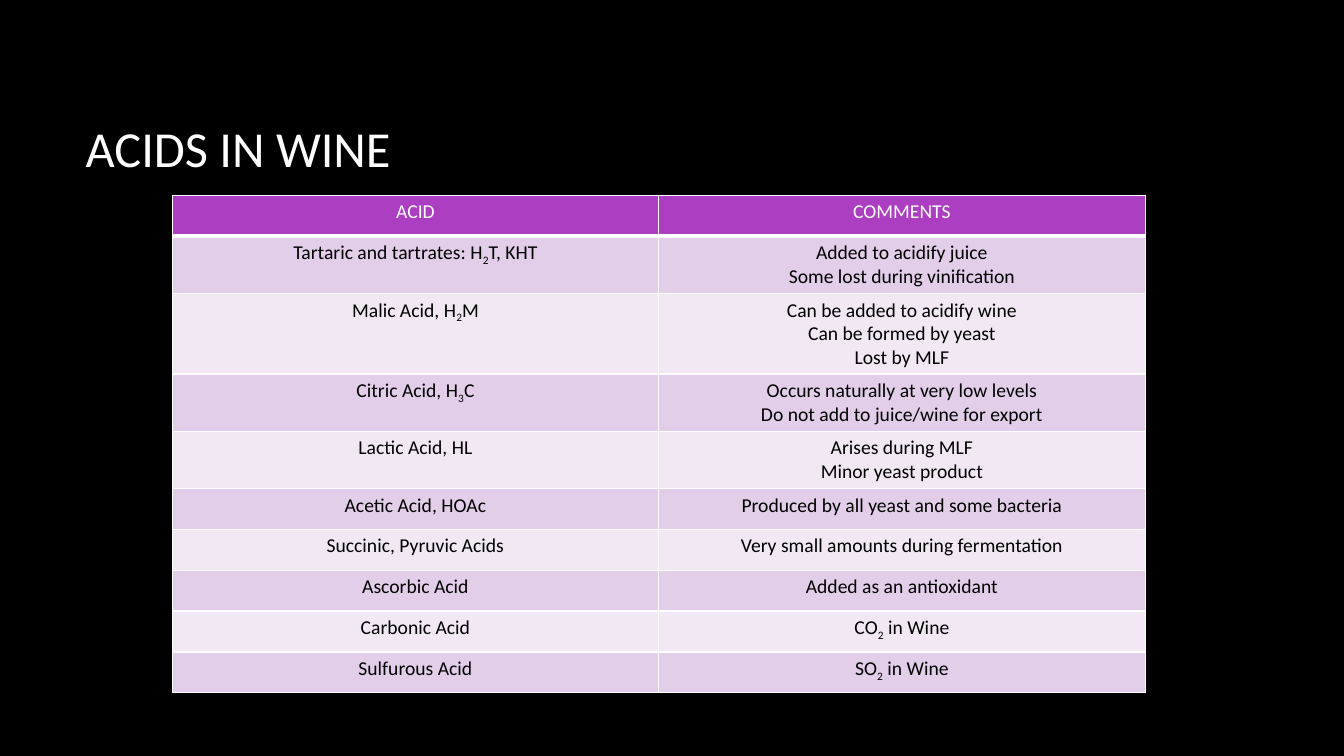
from lxml.etree import SubElement as Sub
from pptx import Presentation
from pptx.dml.color import RGBColor as Rgb
from pptx.enum.text import MSO_ANCHOR as Anchor, PP_ALIGN as Align
from pptx.oxml.ns import qn
from pptx.util import Cm, Pt

TITLE = "ACIDS IN WINE"
HEAD = ("ACID", ["COMMENTS"])
# Underscores enclose a subscript
ACIDS = [
    ("Tartaric and tartrates: H_2_T, KHT",
     ["Added to acidify juice", "Some lost during vinification"]),
    ("Malic Acid, H_2_M",
     ["Can be added to acidify wine", "Can be formed by yeast", "Lost by MLF"]),
    ("Citric Acid, H_3_C",
     ["Occurs naturally at very low levels", "Do not add to juice/wine for export"]),
    ("Lactic Acid, HL", ["Arises during MLF", "Minor yeast product"]),
    ("Acetic Acid, HOAc", ["Produced by all yeast and some bacteria"]),
    ("Succinic, Pyruvic Acids", ["Very small amounts during fermentation"]),
    ("Ascorbic Acid", ["Added as an antioxidant"]),
    ("Carbonic Acid", ["CO_2_ in Wine"]),
    ("Sulfurous Acid", ["SO_2_ in Wine"]),
]
COLORS = {"back": "000000", "light": "FFFFFF", "dark": "000000",
          "head": "AC3EC1", "odd": "E3CEE9", "even": "F1E8F4"}
FONT = "Calibri"
COL_W, ROW_H = 12.26, 1.03


def color(name):
    return Rgb.from_string(COLORS[name])


def style(run, size, tint):
    run.font.name = FONT
    run.font.size = Pt(size)
    run.font.color.rgb = color(tint)


def write(para, text, tint):
    para.alignment = Align.CENTER
    for i, part in enumerate(text.split("_")):
        run = para.add_run()
        run.text = part
        style(run, 14, tint)
        if i % 2:
            run.font._element.set("baseline", "-25000")


def border(cell, low):
    props = cell._tc.get_or_add_tcPr()
    for side, width in (("L", 1), ("R", 1), ("T", 1), ("B", low)):
        line = Sub(props, qn(f"a:ln{side}"), w=str(Pt(width)))
        fill = Sub(line, qn("a:solidFill"))
        Sub(fill, qn("a:srgbClr"), val=COLORS["light"])


def fill_cell(cell, lines, back, tint, low):
    border(cell, low)
    cell.fill.solid()
    cell.fill.fore_color.rgb = color(back)
    frame = cell.text_frame
    for i, text in enumerate(lines):
        para = frame.add_paragraph() if i else frame.paragraphs[0]
        write(para, text, tint)


def main():
    deck = Presentation()
    deck.slide_width, deck.slide_height = Cm(33.87), Cm(19.05)
    slide = deck.slides.add_slide(deck.slide_layouts[6])
    slide.background.fill.solid()
    slide.background.fill.fore_color.rgb = color("back")

    # Title
    box = slide.shapes.add_textbox(Cm(1.91), Cm(1.7), Cm(28.14), Cm(4.04))
    frame = box.text_frame
    frame.word_wrap = True
    frame.vertical_anchor = Anchor.MIDDLE
    frame.text = TITLE
    style(frame.paragraphs[0].runs[0], 36, "light")

    # Table of acids
    rows = [HEAD] + ACIDS
    table = slide.shapes.add_table(
        len(rows), 2, Cm(4.34), Cm(4.92),
        Cm(2 * COL_W), Cm(len(rows) * ROW_H)).table
    for col in table.columns:
        col.width = Cm(COL_W)
    for i, (acid, notes) in enumerate(rows):
        table.rows[i].height = Cm(ROW_H)
        if i == 0:
            look = ("head", "light", 3)
        else:
            look = ("odd" if i % 2 else "even", "dark", 1)
        fill_cell(table.cell(i, 0), [acid], *look)
        fill_cell(table.cell(i, 1), notes, *look)

    deck.save("out.pptx")


if __name__ == "__main__":
    main()
